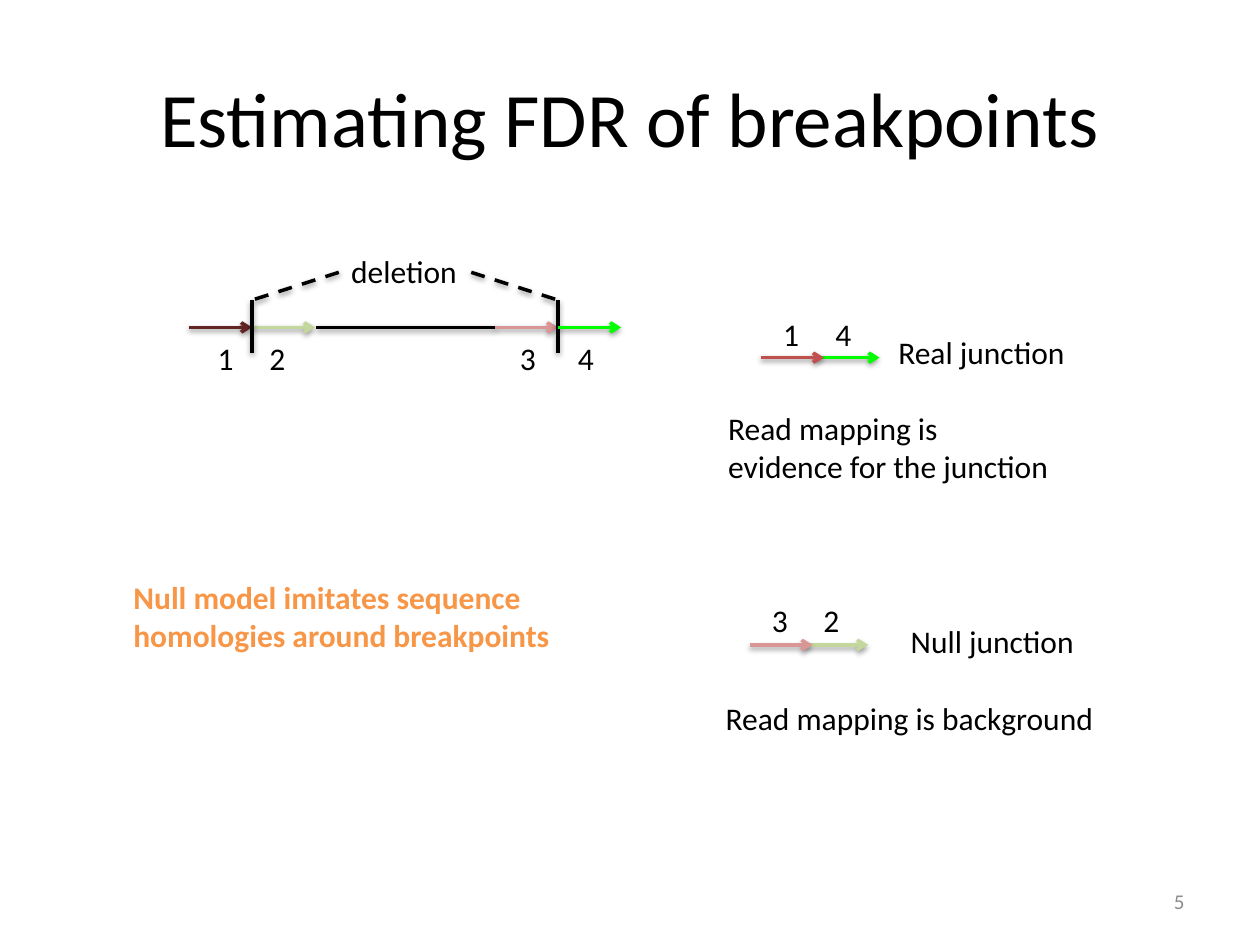
from dataclasses import dataclass
from typing import Optional

from lxml.etree import SubElement
from pptx import Presentation
from pptx.dml.color import RGBColor
from pptx.enum.dml import MSO_LINE
from pptx.enum.shapes import MSO_CONNECTOR
from pptx.enum.text import MSO_ANCHOR, PP_ALIGN
from pptx.oxml.ns import qn
from pptx.util import Cm, Pt

BLACK = RGBColor(0x00, 0x00, 0x00)
MAROON = RGBColor(0x63, 0x25, 0x23)
SAGE = RGBColor(0xC3, 0xD6, 0x9B)
ROSE = RGBColor(0xD9, 0x96, 0x94)
RED = RGBColor(0xC0, 0x50, 0x4D)
GREEN = RGBColor(0x00, 0xFF, 0x00)
ORANGE = RGBColor(0xF7, 0x96, 0x46)
GRAY = RGBColor(0x8C, 0x8C, 0x8C)

SEGMENT = 1.27
GENOME_Y = 6.6
LEFT_BREAK, RIGHT_BREAK = 5.08, 11.25
TICK_TOP, TICK_BOTTOM = 6.05, 7.11
LABEL_SIDE = 1.02


@dataclass
class Stroke:
    x1: float
    y1: float
    x2: float
    y2: float
    color: RGBColor = BLACK
    arrow: bool = False
    dash: bool = False


@dataclass
class Caption:
    lines: list[str]
    left: float
    top: float
    width: float
    height: float
    size: int = 18
    color: RGBColor = BLACK
    bold: bool = False
    align: PP_ALIGN = PP_ALIGN.LEFT
    anchor: MSO_ANCHOR = MSO_ANCHOR.TOP
    heading_indent: Optional[float] = None


def segment(x: float, y: float, color: RGBColor) -> Stroke:
    return Stroke(x, y, x + SEGMENT, y, color, arrow=True)


def digit(text: str, center: float, top: float) -> Caption:
    return Caption([text], center - LABEL_SIDE / 2, top, LABEL_SIDE, LABEL_SIDE,
                   align=PP_ALIGN.CENTER)


def draw_stroke(page, stroke: Stroke) -> None:
    connector = page.shapes.add_connector(
        MSO_CONNECTOR.STRAIGHT,
        Cm(stroke.x1), Cm(stroke.y1), Cm(stroke.x2), Cm(stroke.y2))
    connector.line.width = Pt(2)
    connector.line.color.rgb = stroke.color
    if stroke.dash:
        connector.line.dash_style = MSO_LINE.DASH
    if stroke.arrow:
        SubElement(connector.line._get_or_add_ln(), qn("a:tailEnd"), type="arrow")
    effects = SubElement(connector._element.spPr, qn("a:effectLst"))
    shadow = SubElement(effects, qn("a:outerShdw"), blurRad=str(Pt(3.1)),
                        dist=str(Pt(1.6)), dir="5400000", rotWithShape="0")
    shade = SubElement(shadow, qn("a:srgbClr"), val=str(BLACK))
    SubElement(shade, qn("a:alpha"), val="38000")


def draw_caption(page, caption: Caption) -> None:
    box = page.shapes.add_textbox(Cm(caption.left), Cm(caption.top),
                                  Cm(caption.width), Cm(caption.height))
    frame = box.text_frame
    frame.word_wrap = True
    frame.vertical_anchor = caption.anchor
    style = {"name": "Calibri", "size": Pt(caption.size), "bold": caption.bold}
    for index, line in enumerate(caption.lines):
        para = frame.paragraphs[0] if index == 0 else frame.add_paragraph()
        para.alignment = caption.align
        if index == 0 and caption.heading_indent is not None:
            para._p.get_or_add_pPr().set("marL", str(Cm(caption.heading_indent)))
            para.space_after = Pt(22)
        span = para.add_run()
        span.text = line
        for name, value in style.items():
            setattr(span.font, name, value)
        span.font.color.rgb = caption.color


STROKES = [
    Stroke(6.38, GENOME_Y, 9.98, GENOME_Y),
    segment(LEFT_BREAK - SEGMENT, GENOME_Y, MAROON),
    segment(LEFT_BREAK, GENOME_Y, SAGE),
    segment(RIGHT_BREAK - SEGMENT, GENOME_Y, ROSE),
    segment(16.46, 7.21, GREEN),
    Stroke(LEFT_BREAK, TICK_TOP, LEFT_BREAK, TICK_BOTTOM),
    Stroke(RIGHT_BREAK, TICK_TOP, RIGHT_BREAK, TICK_BOTTOM),
    Stroke(9.5, 5.49, RIGHT_BREAK, TICK_TOP, dash=True),
    Stroke(6.83, 5.49, LEFT_BREAK, TICK_TOP, dash=True),
    segment(15.34, 7.21, RED),
    segment(RIGHT_BREAK, GENOME_Y, GREEN),
    segment(16.23, 13, SAGE),
    segment(15.11, 13, ROSE),
]

CAPTIONS = [
    Caption(["Estimating FDR of breakpoints"], 1.27, 0.76, 22.86, 3.18, size=44,
            align=PP_ALIGN.CENTER, anchor=MSO_ANCHOR.MIDDLE),
    Caption(["deletion"], 6.83, 4.95, 2.8, 1.02),
    Caption(["Real junction", "Read mapping is", "evidence for the junction"],
            14.43, 6.58, 7.6, 3.33, heading_indent=3.43),
    Caption(["Null junction", "Read mapping is background"],
            14.38, 12.42, 8.3, 2.57, heading_indent=3.73),
    Caption(["Null model imitates sequence", "homologies around breakpoints"],
            2.44, 11.53, 9.3, 1.8, color=ORANGE, bold=True),
    digit("1", 4.55, 6.71),
    digit("2", 5.59, 6.71),
    digit("3", 10.64, 6.71),
    digit("4", 11.81, 6.71),
    digit("1", 15.95, 6.22),
    digit("4", 17, 6.22),
    digit("3", 15.72, 11.99),
    digit("2", 16.76, 11.99),
    Caption(["5"], 18.21, 17.65, 5.92, 1.02, size=12, color=GRAY,
            align=PP_ALIGN.RIGHT, anchor=MSO_ANCHOR.MIDDLE),
]


def main() -> None:
    deck = Presentation()
    deck.slide_width, deck.slide_height = Cm(25.4), Cm(19.05)
    page = deck.slides.add_slide(deck.slide_layouts[6])
    for stroke in STROKES:
        draw_stroke(page, stroke)
    for caption in CAPTIONS:
        draw_caption(page, caption)
    deck.save("out.pptx")


if __name__ == "__main__":
    main()
